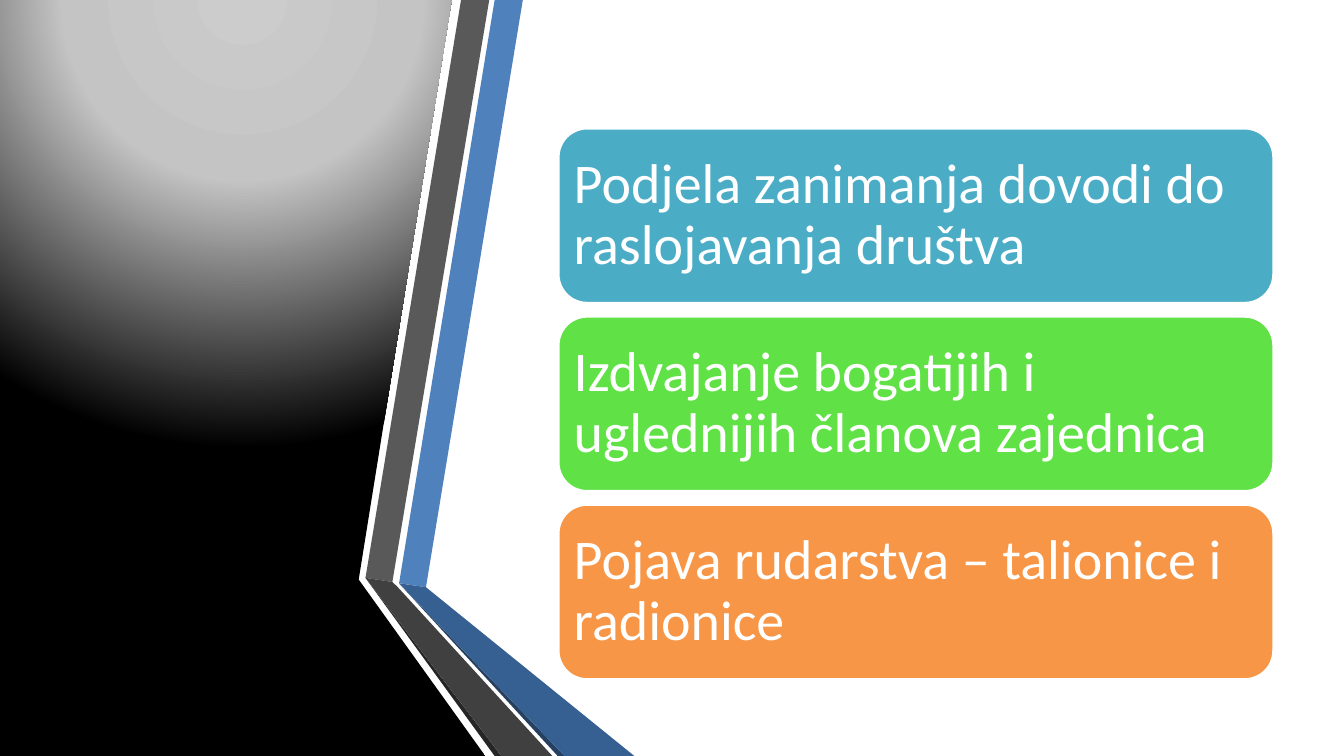
from lxml import etree
from pptx import Presentation
from pptx.dml.color import RGBColor
from pptx.enum.shapes import MSO_SHAPE
from pptx.enum.text import MSO_ANCHOR, PP_ALIGN
from pptx.oxml import parse_xml
from pptx.oxml.ns import nsdecls, qn
from pptx.util import Pt

WIDTH, HEIGHT = 720, 405
CARD_LEFT, CARD_TOP, CARD_WIDTH, CARD_HEIGHT = 298.8, 68.4, 383.8, 94.3
CARD_PITCH = 100.8

PANEL = [(190, 0), (242, 0), (192.2, 310.5), (260, HEIGHT), (0, HEIGHT), (0, 0)]
PANEL_STOPS = [(0, "CCCCCC"), (40, "C4C4C4"), (100, "000000")]
RIBBONS = [
    ("4F81BD", [(213.8, 312.5), (228.2, 314.6), (280.1, 0), (265, 0)]),
    ("595959", [(262.1, 0), (247, 0), (195.8, 309.6), (210.2, 311.8)]),
    ("262626", [(195.8, 309.6), (265, HEIGHT), (268.6, HEIGHT)]),
    ("254061", [(213.8, 312.5), (298.8, HEIGHT), (302.4, HEIGHT)]),
    ("376092", [(213.8, 312.5), (302.4, HEIGHT), (339.8, HEIGHT), (228.2, 314.6)]),
    ("404040", [(295.9, HEIGHT), (213.1, 314.6), (210.2, 311.8), (195.8, 309.6),
                (268.6, HEIGHT)]),
]
CARDS = [
    ("4BACC6", "Podjela zanimanja dovodi do raslojavanja društva"),
    ("60E146", "Izdvajanje bogatijih i uglednijih članova zajednica"),
    ("F79646", "Pojava rudarstva – talionice i radionice"),
]


def set_solid(fill, color):
    """Fill with one hex colour."""
    fill.solid()
    fill.fore_color.rgb = RGBColor.from_string(color)


def add_polygon(slide, points, color):
    """Draw a closed outline without a line."""
    corners = [(Pt(x), Pt(y)) for x, y in points]
    builder = slide.shapes.build_freeform(*corners[0], scale=1.0)
    builder.add_line_segments(corners[1:], close=True)
    shape = builder.convert_to_shape()
    shape.shadow.inherit = False
    shape.line.fill.background()
    set_solid(shape.fill, color)
    return shape


def set_radial_gradient(shape, stops):
    """Replace the solid fill by a circular gradient centred above the shape."""
    solid = shape.element.spPr.find(qn("a:solidFill"))
    gradient = parse_xml(f'<a:gradFill {nsdecls("a")} rotWithShape="1"/>')
    stop_list = etree.SubElement(gradient, qn("a:gsLst"))
    for percent, color in stops:
        stop = etree.SubElement(stop_list, qn("a:gs"), pos=str(percent * 1000))
        etree.SubElement(stop, qn("a:srgbClr"), val=color)
    circle = etree.SubElement(gradient, qn("a:path"), path="circle")
    etree.SubElement(circle, qn("a:fillToRect"), l="50000", t="-80000", r="50000", b="180000")
    solid.getparent().replace(solid, gradient)


def add_card(slide, top, color, text):
    """Add a rounded card with large white text."""
    shape = slide.shapes.add_shape(
        MSO_SHAPE.ROUNDED_RECTANGLE, Pt(CARD_LEFT), Pt(top), Pt(CARD_WIDTH), Pt(CARD_HEIGHT))
    shape.shadow.inherit = False
    set_solid(shape.fill, color)
    set_solid(shape.line.fill, "FFFFFF")
    shape.line.width = Pt(2)
    frame = shape.text_frame
    frame.word_wrap = True
    frame.vertical_anchor = MSO_ANCHOR.MIDDLE
    frame.margin_left = frame.margin_right = Pt(4)
    frame.margin_top = frame.margin_bottom = Pt(4)
    frame.text = text
    paragraph = frame.paragraphs[0]
    paragraph.alignment = PP_ALIGN.LEFT
    paragraph.line_spacing = 0.9
    font = paragraph.runs[0].font
    font.name = "Calibri"
    font.size = Pt(30)
    set_solid(font.fill, "FFFFFF")


def main():
    """Build the slide and save it."""
    presentation = Presentation()
    presentation.slide_width, presentation.slide_height = Pt(WIDTH), Pt(HEIGHT)
    slide = presentation.slides.add_slide(presentation.slide_layouts[6])
    set_solid(slide.background.fill, "FFFFFF")
    panel = add_polygon(slide, PANEL, "000000")
    set_radial_gradient(panel, PANEL_STOPS)
    for color, points in RIBBONS:
        add_polygon(slide, points, color)
    for index, (color, text) in enumerate(CARDS):
        add_card(slide, CARD_TOP + index * CARD_PITCH, color, text)
    presentation.save("out.pptx")


if __name__ == "__main__":
    main()
